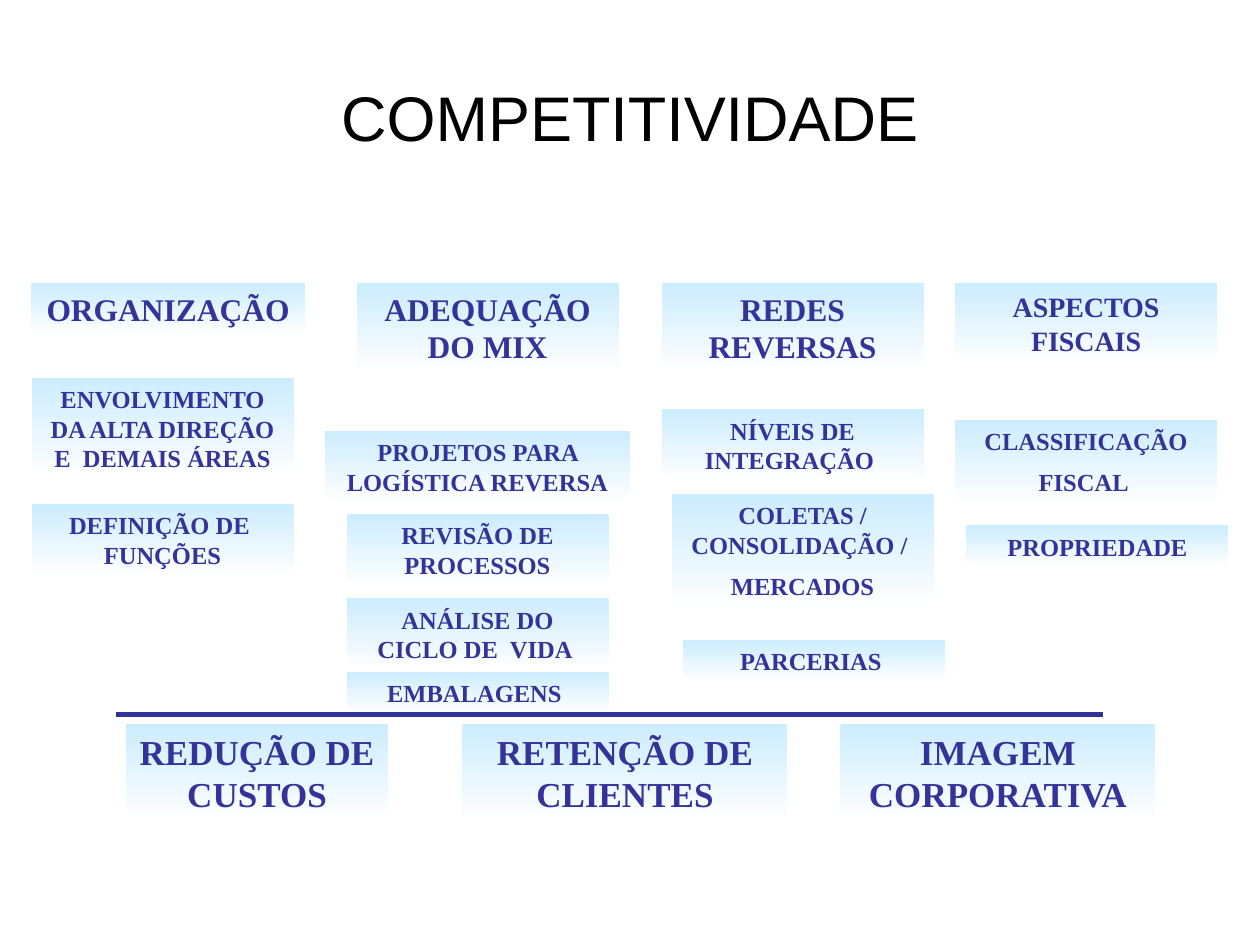
"""Build the COMPETITIVIDADE slide with its topic columns and result boxes."""
from typing import Any, NamedTuple

import lxml.etree
import pptx
import pptx.dml.color
import pptx.enum.shapes
import pptx.enum.text
import pptx.oxml.ns
import pptx.util

Inches = pptx.util.Inches
Pt = pptx.util.Pt
RGBColor = pptx.dml.color.RGBColor
SKY = RGBColor(0xCC, 0xEC, 0xFF)
WHITE = RGBColor(0xFF, 0xFF, 0xFF)
INDIGO = RGBColor(0x33, 0x33, 0x99)
BLACK = RGBColor(0, 0, 0)
HEAD, SMALL_HEAD, ITEM, RESULT = 18, 16, 14, 20
BOX_WIDTH = 2.08


class Box(NamedTuple):
    text: str
    left: float
    top: float
    height: float
    size: int = ITEM
    width: float = BOX_WIDTH


BOXES = [
    Box("ORGANIZAÇÃO", 0.25, 2.25, 0.4, HEAD, 2.17),
    Box("ADEQUAÇÃO DO MIX", 2.83, 2.25, 0.7, HEAD),
    Box("REDES REVERSAS", 5.25, 2.25, 0.7, HEAD),
    Box("ASPECTOS FISCAIS", 7.58, 2.25, 0.64, SMALL_HEAD),
    Box("ENVOLVIMENTO DA ALTA DIREÇÃO E  DEMAIS ÁREAS", 0.25, 3, 0.8),
    Box("DEFINIÇÃO DE  FUNÇÕES", 0.25, 4, 0.57),
    Box("PROJETOS PARA LOGÍSTICA REVERSA", 2.58, 3.42, 0.57, width=2.42),
    Box("REVISÃO DE PROCESSOS", 2.75, 4.08, 0.57),
    Box("ANÁLISE DO CICLO DE  VIDA ", 2.75, 4.75, 0.57),
    Box("EMBALAGENS ", 2.75, 5.33, 0.33),
    Box("NÍVEIS DE INTEGRAÇÃO ", 5.25, 3.25, 0.57),
    Box("COLETAS / CONSOLIDAÇÃO / \nMERCADOS", 5.33, 3.92, 0.91),
    Box("PARCERIAS ", 5.42, 5.08, 0.33),
    Box("CLASSIFICAÇÃO\nFISCAL ", 7.58, 3.33, 0.68),
    Box("PROPRIEDADE", 7.67, 4.17, 0.33),
    Box("REDUÇÃO DE CUSTOS", 1, 5.75, 0.77, RESULT),
    Box("RETENÇÃO DE CLIENTES", 3.67, 5.75, 0.77, RESULT, 2.58),
    Box("IMAGEM CORPORATIVA", 6.67, 5.75, 0.77, RESULT, 2.5),
]


def apply(target: Any, values: dict[str, Any]) -> None:
    """Set each named attribute on the target."""
    for name, value in values.items():
        setattr(target, name, value)


def write(tf: Any, text: str, size: int, font: str, color: RGBColor, bold: bool) -> None:
    """Write centred paragraphs, half a line apart."""
    for i, line in enumerate(text.split("\n")):
        p = tf.paragraphs[0] if i == 0 else tf.add_paragraph()
        apply(p, {"alignment": pptx.enum.text.PP_ALIGN.CENTER,
                  "space_before": Pt(size / 2 if i else 0)})
        r = p.add_run()
        r.text = line
        apply(r.font, {"name": font, "size": Pt(size), "bold": bold})
        r.font.color.rgb = color


def add_title(s: Any, text: str) -> None:
    """Place and format the title placeholder."""
    sp = s.shapes.title
    apply(sp, {"left": Inches(0.5), "top": Inches(0.3),
               "width": Inches(9), "height": Inches(1.25)})
    sp.text_frame.vertical_anchor = pptx.enum.text.MSO_ANCHOR.MIDDLE
    write(sp.text_frame, text, 36, "Arial", BLACK, False)


def add_box(s: Any, box: Box) -> None:
    """Draw one box that fades from sky blue to white."""
    sp = s.shapes.add_shape(
        pptx.enum.shapes.MSO_SHAPE.RECTANGLE, Inches(box.left), Inches(box.top),
        Inches(box.width), Inches(box.height))
    sp.shadow.inherit = False
    sp.line.fill.background()
    sp.fill.gradient()
    sp.fill.gradient_angle = 270
    for stop, position, color in zip(sp.fill.gradient_stops, (0, 1), (SKY, WHITE)):
        stop.position = position
        stop.color.rgb = color
    tf = sp.text_frame
    apply(tf, {"word_wrap": True,
               "auto_size": pptx.enum.text.MSO_AUTO_SIZE.SHAPE_TO_FIT_TEXT,
               "vertical_anchor": pptx.enum.text.MSO_ANCHOR.TOP})
    write(tf, box.text, box.size, "Times New Roman", INDIGO, True)


def add_rule(s: Any, left: float, right: float, y: float) -> None:
    """Draw the horizontal line above the results."""
    line = s.shapes.add_connector(
        pptx.enum.shapes.MSO_CONNECTOR.STRAIGHT,
        Inches(left), Inches(y), Inches(right), Inches(y))
    line.line.color.rgb = INDIGO
    line.line.width = Pt(3)
    lxml.etree.SubElement(line._element.spPr, pptx.oxml.ns.qn("a:effectLst"))


def main() -> None:
    """Create and save the presentation."""
    prs = pptx.Presentation()
    apply(prs, {"slide_width": Inches(10), "slide_height": Inches(7.5)})
    s = prs.slides.add_slide(prs.slide_layouts[5])
    add_title(s, "COMPETITIVIDADE")
    for box in BOXES:
        add_box(s, box)
    add_rule(s, 0.92, 8.75, 5.67)
    prs.save("out.pptx")


if __name__ == "__main__":
    main()
